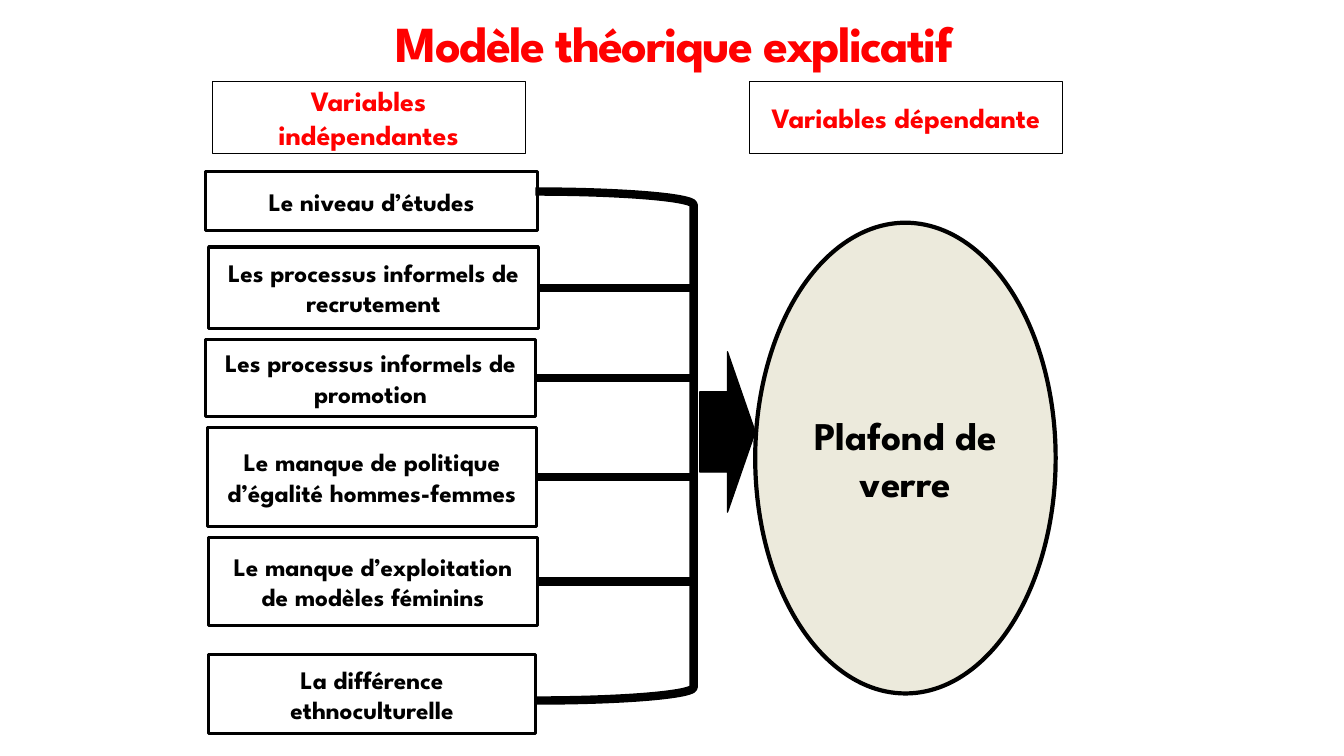
from lxml import etree
from pptx import Presentation
from pptx import util as u
from pptx.dml import color
from pptx.enum import shapes, text
from pptx.oxml import ns

FONT = "League Spartan"
BLACK, RED, WHITE, CREAM = "000000", "FF0000", "FFFFFF", "ECEADC"
FACTORS = [
    ("Le niveau d’études", (2.04, 1.7, 3.29, 0.59)),
    ("Les processus informels de recrutement", (2.07, 2.45, 3.27, 0.81)),
    ("Les processus informels de promotion", (2.04, 3.37, 3.27, 0.76)),
    ("Le manque de politique d’égalité hommes-femmes", (2.06, 4.24, 3.26, 0.98)),
    ("Le manque d’exploitation de modèles féminins", (2.07, 5.33, 3.26, 0.88)),
    ("La différence ethnoculturelle", (2.07, 6.49, 3.24, 0.79)),
]


def paint(target, value):
    target.rgb = color.RGBColor.from_string(value)


def write(frame, words, size, ink):
    frame.word_wrap = True
    frame.auto_size = text.MSO_AUTO_SIZE.NONE
    frame.vertical_anchor = text.MSO_ANCHOR.MIDDLE
    para = frame.paragraphs[0]
    para.alignment = text.PP_ALIGN.CENTER
    span = para.add_run()
    span.text = words
    span.font.name = FONT
    span.font.size = u.Pt(size)
    span.font.bold = True
    paint(span.font.color, ink)
    return para, span


def add_figure(page, kind, box, line_width, fill=None):
    figure = page.shapes.add_shape(kind, *map(u.Inches, box))
    figure.shadow.inherit = False
    if fill:
        figure.fill.solid()
        paint(figure.fill.fore_color, fill)
    else:
        figure.fill.background()
    paint(figure.line.color, BLACK)
    figure.line.width = u.Pt(line_width)
    return figure


def add_title(page, box):
    title = page.shapes.title
    title.left, title.top, title.width, title.height = map(u.Inches, box)
    para, span = write(title.text_frame, "Modèle théorique explicatif", 36, RED)
    para.line_spacing = 0.85
    span._r.get_or_add_rPr().set("spc", "-120")


def add_heading(page, words, box):
    heading = add_figure(page, shapes.MSO_SHAPE.RECTANGLE, box, 0.25, WHITE)
    write(heading.text_frame, words, 20, RED)


def add_factors(page):
    factors = []
    for words, box in FACTORS:
        factor = add_figure(page, shapes.MSO_SHAPE.RECTANGLE, box, 2.25, WHITE)
        write(factor.text_frame, words, 18, BLACK)
        factors.append(factor)
    return factors


def add_bracket(page, box, factors):
    left, top, width, height = box
    add_figure(page, shapes.MSO_SHAPE.RIGHT_BRACKET, box, 6)
    for factor in factors[1:-1]:
        middle = factor.top + factor.height // 2
        branch = page.shapes.add_connector(
            shapes.MSO_CONNECTOR.STRAIGHT, factor.left + factor.width, middle,
            u.Inches(left + width), middle)
        branch.begin_connect(factor, 3)
        paint(branch.line.color, BLACK)
        branch.line.width = u.Pt(6)
        etree.SubElement(branch._element.spPr, ns.qn("a:effectLst"))


def add_outcome(page, box):
    left, top, width, height = box
    arrow_box = (left - 0.55, top + 1.28, 0.55, 1.59)
    add_figure(page, shapes.MSO_SHAPE.RIGHT_ARROW, arrow_box, 1, BLACK)
    outcome = add_figure(page, shapes.MSO_SHAPE.OVAL, box, 3, CREAM)
    frame = outcome.text_frame
    frame.margin_left = frame.margin_right = u.Inches(0.07)
    frame.margin_top = frame.margin_bottom = u.Inches(0.03)
    write(frame, "Plafond de verre", 28, BLACK)


def main():
    deck = Presentation()
    deck.slide_width, deck.slide_height = u.Inches(13.33), u.Inches(7.5)
    page = deck.slides.add_slide(deck.slide_layouts[5])
    add_title(page, (2.27, 0.07, 8.84, 0.8))
    add_heading(page, "Variables indépendantes", (2.1, 0.81, 3.11, 0.71))
    factors = add_factors(page)
    add_bracket(page, (5.31, 1.9, 1.57, 5.05), factors)
    add_outcome(page, (7.49, 2.21, 2.98, 4.67))
    add_heading(page, "Variables dépendante", (7.43, 0.81, 3.11, 0.71))
    deck.save("out.pptx")


if __name__ == "__main__":
    main()
